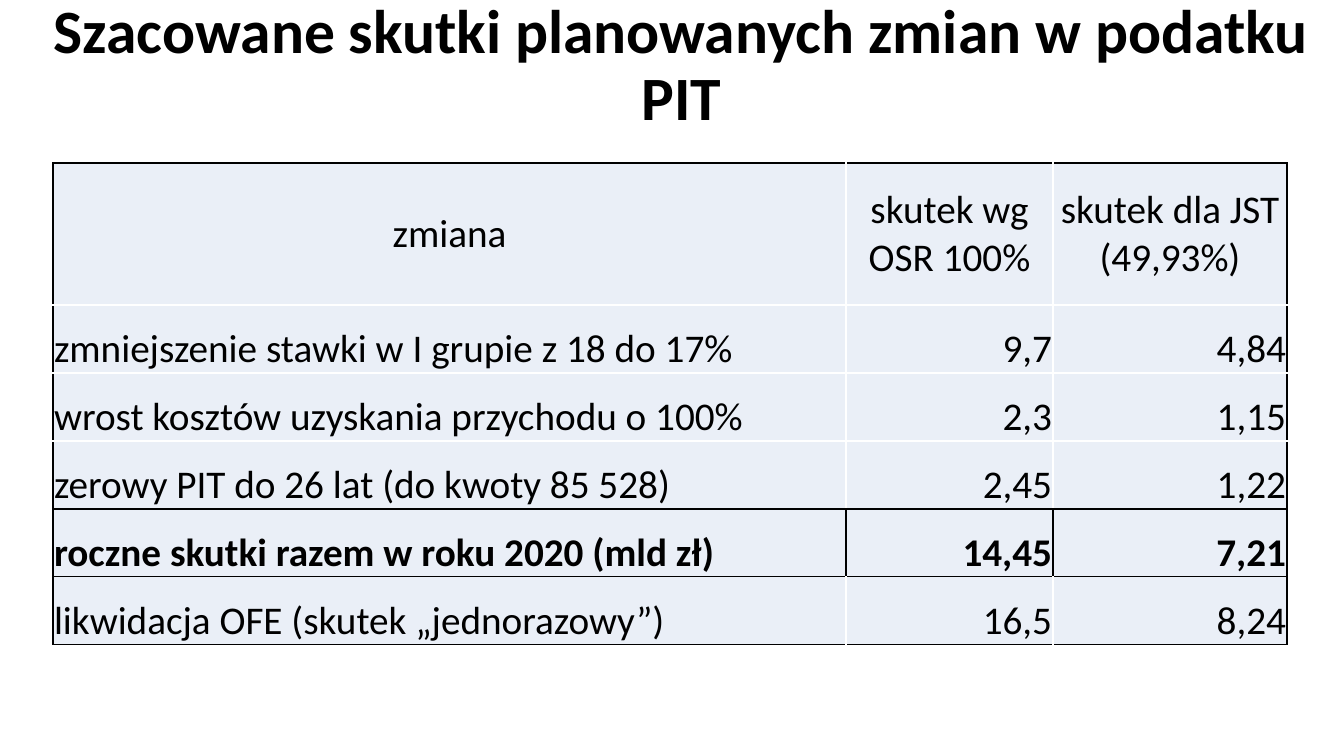
from lxml import etree
from pptx import Presentation
from pptx.dml.color import RGBColor
from pptx.enum.text import MSO_ANCHOR as ANCHOR, PP_ALIGN as ALIGN
from pptx.oxml.ns import qn

TITLE = "Szacowane skutki planowanych zmian w podatku PIT"
ROWS = [
    ("zmiana", "skutek wg OSR 100%", "skutek dla JST (49,93%)"),
    ("zmniejszenie stawki w I grupie z 18 do 17%", "9,7", "4,84"),
    ("wrost kosztów uzyskania przychodu o 100%", "2,3", "1,15"),
    ("zerowy PIT do 26 lat (do kwoty 85 528)", "2,45", "1,22"),
    ("roczne skutki razem w roku 2020 (mld zł)", "14,45", "7,21"),
    ("likwidacja OFE (skutek „jednorazowy”)", "16,5", "8,24"),
]
TOTAL_ROW = 4
COLORS = {"text": "000000", "frame": "000000", "grid": "FFFFFF", "cell": "EAEFF7"}
FONT = "Calibri"

PAGE = (1344, 756)
TITLE_BOX = (19, 18, 1325, 98)
TABLE_AT = (53, 163)
COLUMN_WIDTHS = (793, 207, 234)
ROW_HEIGHTS = (142,) + (68,) * 5
EMU_PER_PX = 12192000 / PAGE[0]
BORDER_PT = 1
CELL_FORMAT = {"margin_left": 1, "margin_right": 1, "margin_top": 1, "margin_bottom": 0}


def px(length):
    return round(length * EMU_PER_PX)


def color(name):
    return RGBColor.from_string(COLORS[name])


def write(para, text, size, bold, align):
    para.alignment = align
    span = para.add_run()
    span.text = text
    formats = {"name": FONT, "size": size * 12700, "bold": bold}
    for key, value in formats.items():
        setattr(span.font, key, value)
    span.font.color.rgb = color("text")


def draw_borders(cell, row, column):
    last_row, last_column = len(ROWS) - 1, len(COLUMN_WIDTHS) - 1
    total = row == TOTAL_ROW
    framed = {
        "lnL": total or column == 0,
        "lnR": total or column == last_column,
        "lnT": row in (0, TOTAL_ROW, TOTAL_ROW + 1),
        "lnB": row in (TOTAL_ROW - 1, TOTAL_ROW, last_row),
    }
    properties = cell._tc.get_or_add_tcPr()
    for place, (side, is_frame) in enumerate(framed.items()):
        line = etree.Element(qn("a:" + side), w=str(BORDER_PT * 12700))
        fill = etree.SubElement(line, qn("a:solidFill"))
        shade = COLORS["frame" if is_frame else "grid"]
        etree.SubElement(fill, qn("a:srgbClr"), val=shade)
        properties.insert(place, line)


def add_title(page):
    box = page.shapes.add_textbox(*map(px, TITLE_BOX))
    frame = box.text_frame
    frame.word_wrap = True
    frame.vertical_anchor = ANCHOR.MIDDLE
    para = frame.paragraphs[0]
    para.line_spacing = 0.9
    write(para, TITLE, 44, True, ALIGN.CENTER)


def add_effects_table(page):
    area = TABLE_AT + (sum(COLUMN_WIDTHS), sum(ROW_HEIGHTS))
    table = page.shapes.add_table(len(ROWS), len(COLUMN_WIDTHS), *map(px, area)).table
    table.first_row = table.horz_banding = False
    for column, width in zip(table.columns, COLUMN_WIDTHS):
        column.width = px(width)
    for row, height in zip(table.rows, ROW_HEIGHTS):
        row.height = px(height)
    for row, texts in enumerate(ROWS):
        for column, text in enumerate(texts):
            cell = table.cell(row, column)
            for key, value in CELL_FORMAT.items():
                setattr(cell, key, px(value))
            cell.vertical_anchor = ANCHOR.BOTTOM if row else ANCHOR.MIDDLE
            cell.fill.solid()
            cell.fill.fore_color.rgb = color("cell")
            body_align = ALIGN.RIGHT if column else ALIGN.LEFT
            align = body_align if row else ALIGN.CENTER
            write(cell.text_frame.paragraphs[0], text, 28, row == TOTAL_ROW, align)
            draw_borders(cell, row, column)


def main():
    deck = Presentation()
    deck.slide_width, deck.slide_height = map(px, PAGE)
    page = deck.slides.add_slide(deck.slide_layouts[6])
    add_title(page)
    add_effects_table(page)
    deck.save("out.pptx")


if __name__ == "__main__":
    main()
